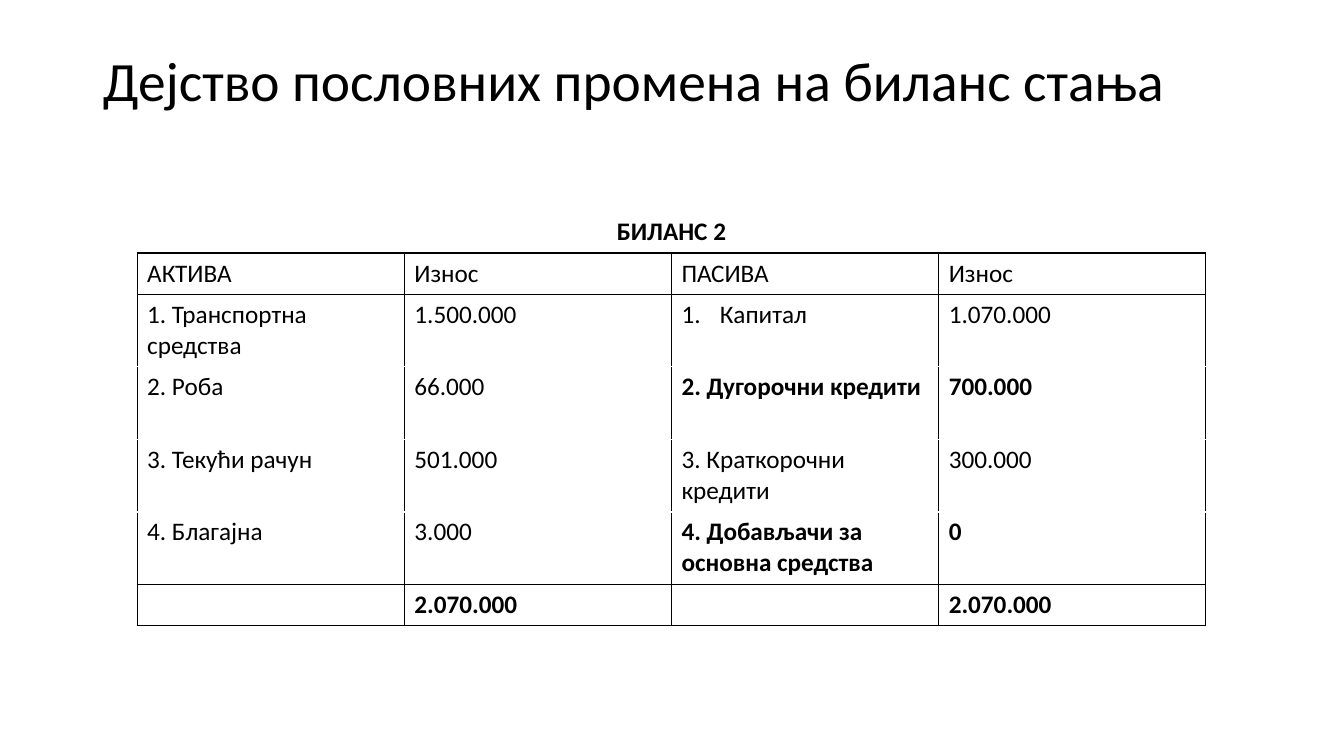
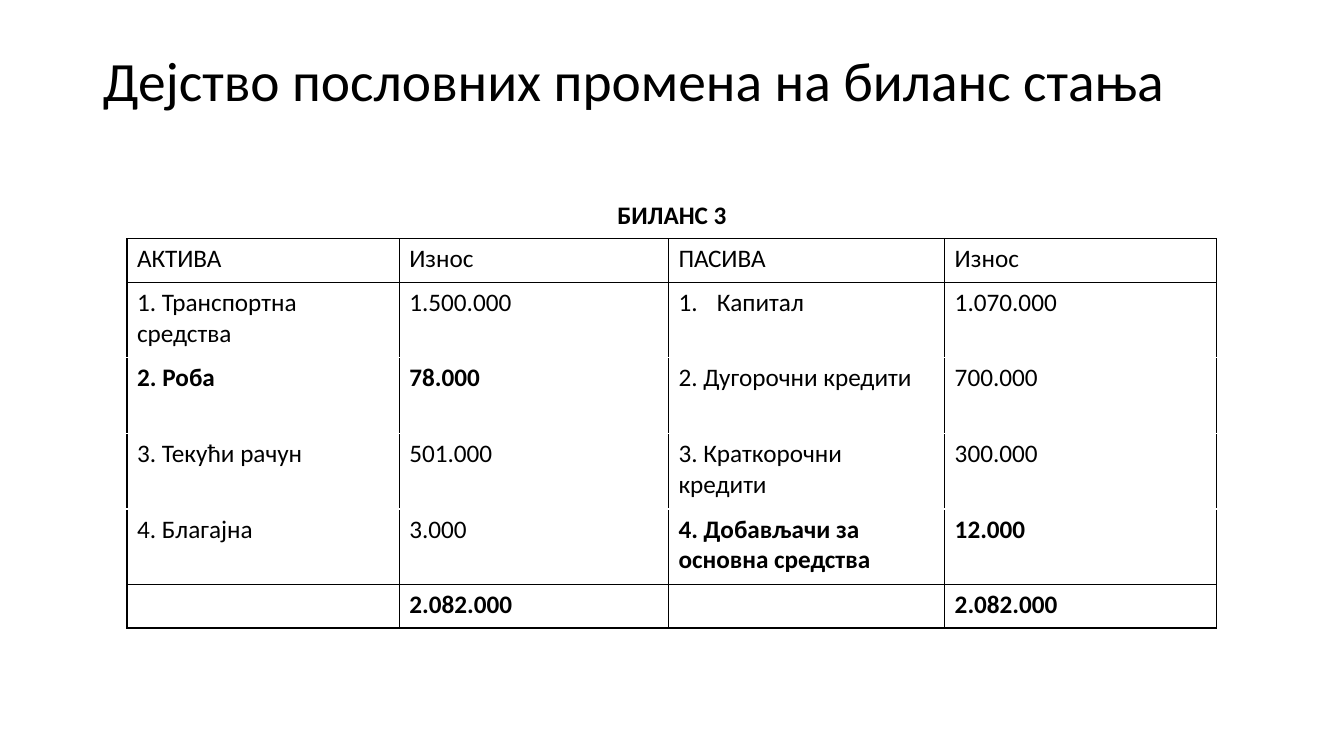
from dataclasses import dataclass

from lxml.etree import SubElement
from pptx import Presentation
from pptx.dml.color import RGBColor
from pptx.enum.text import MSO_ANCHOR, MSO_AUTO_SIZE, PP_ALIGN
from pptx.oxml.ns import qn
from pptx.slide import Slide
from pptx.table import Table, _Cell as Cell
from pptx.util import Inches, Pt

COLORS = {"text": "000000", "line": "000000", "hidden line": "FFFFFF"}
FONT = "Calibri"
TITLE = "Дејство пословних промена на биланс стања"
HEADINGS = ("АКТИВА", "Износ", "ПАСИВА", "Износ")
NUMBERED = "Капитал"


@dataclass(frozen=True)
class Entry:
    name: str
    amount: str
    changed: bool = False


@dataclass(frozen=True)
class BalanceSheet:
    caption: str
    left: float
    top: float
    column_widths: tuple[float, ...]
    single_height: float
    double_height: float
    assets: tuple[Entry, ...]
    liabilities: tuple[Entry, ...]
    total: str


TRANSPORT = Entry("1. Транспортна средства", "1.500.000")
ACCOUNT = Entry("3. Текући рачун", "501.000")
CASH = Entry("4. Благајна", "3.000")
CAPITAL = Entry(NUMBERED, "1.070.000")
SHORT_LOANS = Entry("3. Краткорочни кредити", "300.000")
GOODS = "2. Роба"
LONG_LOANS = "2. Дугорочни кредити"
SUPPLIERS = "4. Добављачи за основна средства"

SHEETS = (
    BalanceSheet(
        "БИЛАНС 2", 1.36, 2.1, (2.65,) * 4, 0.41, 0.72,
        (TRANSPORT, Entry(GOODS, "66.000"), ACCOUNT, CASH),
        (CAPITAL, Entry(LONG_LOANS, "700.000", True), SHORT_LOANS,
         Entry(SUPPLIERS, "0", True)),
        "2.070.000",
    ),
    BalanceSheet(
        "БИЛАНС 3", 1.26, 1.94, (2.7, 2.67, 2.74, 2.7), 0.43, 0.75,
        (TRANSPORT, Entry(GOODS, "78.000", True), ACCOUNT, CASH),
        (CAPITAL, Entry(LONG_LOANS, "700.000"), SHORT_LOANS,
         Entry(SUPPLIERS, "12.000", True)),
        "2.082.000",
    ),
)


def add_title(slide: Slide) -> None:
    title = slide.shapes.title
    title.left, title.top = Inches(0.92), Inches(0.4)
    title.width, title.height = Inches(11.5), Inches(1.45)
    frame = title.text_frame
    frame.text = TITLE
    frame.word_wrap = True
    frame.auto_size = MSO_AUTO_SIZE.NONE
    frame.vertical_anchor = MSO_ANCHOR.MIDDLE
    frame.margin_bottom = Inches(0.65)
    paragraph = frame.paragraphs[0]
    paragraph.alignment = PP_ALIGN.LEFT
    paragraph.line_spacing = 0.9
    font = paragraph.runs[0].font
    font.name, font.size = FONT, Pt(39.6)
    font.color.rgb = RGBColor.from_string(COLORS["text"])


def set_borders(cell: Cell, sides: str | None, top: str | None, bottom: str | None) -> None:
    """Clear the fill and give each edge a colour, or no line for None."""
    cell.fill.background()
    properties = cell._tc.get_or_add_tcPr()
    edges = (("a:lnL", sides), ("a:lnR", sides), ("a:lnT", top), ("a:lnB", bottom))
    for index, (tag, color) in enumerate(edges):
        line = SubElement(properties, qn(tag), w=str(Pt(1)))
        if color is None:
            SubElement(line, qn("a:noFill"))
        else:
            fill = SubElement(line, qn("a:solidFill"))
            SubElement(fill, qn("a:srgbClr"), val=color)
        properties.insert(index, line)


def write_cell(cell: Cell, text: str, bold: bool) -> None:
    cell.text_frame.text = text
    paragraph = cell.text_frame.paragraphs[0]
    if text == NUMBERED:
        properties = paragraph._p.get_or_add_pPr()
        properties.set("marL", str(Inches(0.38)))
        properties.set("indent", str(-Inches(0.38)))
        SubElement(properties, qn("a:buFont"), typeface="+mj-lt")
        SubElement(properties, qn("a:buAutoNum"), type="arabicPeriod")
    for run in paragraph.runs:
        font = run.font
        font.name, font.size, font.bold = FONT, Pt(18), bold
        font.color.rgb = RGBColor.from_string(COLORS["text"])


def write_row(table: Table, row: int, texts: tuple[str, ...], bolds: tuple[bool, ...],
              top: str, bottom: str) -> None:
    for column, (text, bold) in enumerate(zip(texts, bolds)):
        cell = table.cell(row, column)
        set_borders(cell, COLORS["line"], top, bottom)
        write_cell(cell, text, bold)


def add_balance_sheet(slide: Slide, sheet: BalanceSheet) -> None:
    entry_count = len(sheet.assets)
    heights = [sheet.single_height] * 2 + [sheet.double_height] * entry_count
    heights.append(sheet.single_height)
    table = slide.shapes.add_table(
        len(heights), len(HEADINGS), Inches(sheet.left), Inches(sheet.top),
        Inches(sum(sheet.column_widths)), Inches(sum(heights)),
    ).table
    table.first_row = table.horz_banding = False
    for column, width in zip(table.columns, sheet.column_widths):
        column.width = Inches(width)
    for row, height in zip(table.rows, heights):
        row.height = Inches(height)

    line, hidden = COLORS["line"], COLORS["hidden line"]
    for cell in table.rows[0].cells:
        set_borders(cell, None, None, line)
    caption = table.cell(0, 0)
    caption.merge(table.cell(0, len(HEADINGS) - 1))
    write_cell(caption, sheet.caption, True)
    caption.text_frame.paragraphs[0].alignment = PP_ALIGN.CENTER

    write_row(table, 1, HEADINGS, (False,) * 4, line, line)
    for index, (asset, liability) in enumerate(zip(sheet.assets, sheet.liabilities)):
        write_row(
            table, index + 2,
            (asset.name, asset.amount, liability.name, liability.amount),
            (asset.changed,) * 2 + (liability.changed,) * 2,
            line if index == 0 else hidden,
            line if index == entry_count - 1 else hidden,
        )
    write_row(table, len(heights) - 1, ("", sheet.total) * 2, (True,) * 4, line, line)


def main() -> None:
    presentation = Presentation()
    presentation.slide_width, presentation.slide_height = Inches(13.33), Inches(7.5)
    title_only = presentation.slide_layouts[5]
    for sheet in SHEETS:
        slide = presentation.slides.add_slide(title_only)
        add_title(slide)
        add_balance_sheet(slide, sheet)
    presentation.save("out.pptx")


if __name__ == "__main__":
    main()
